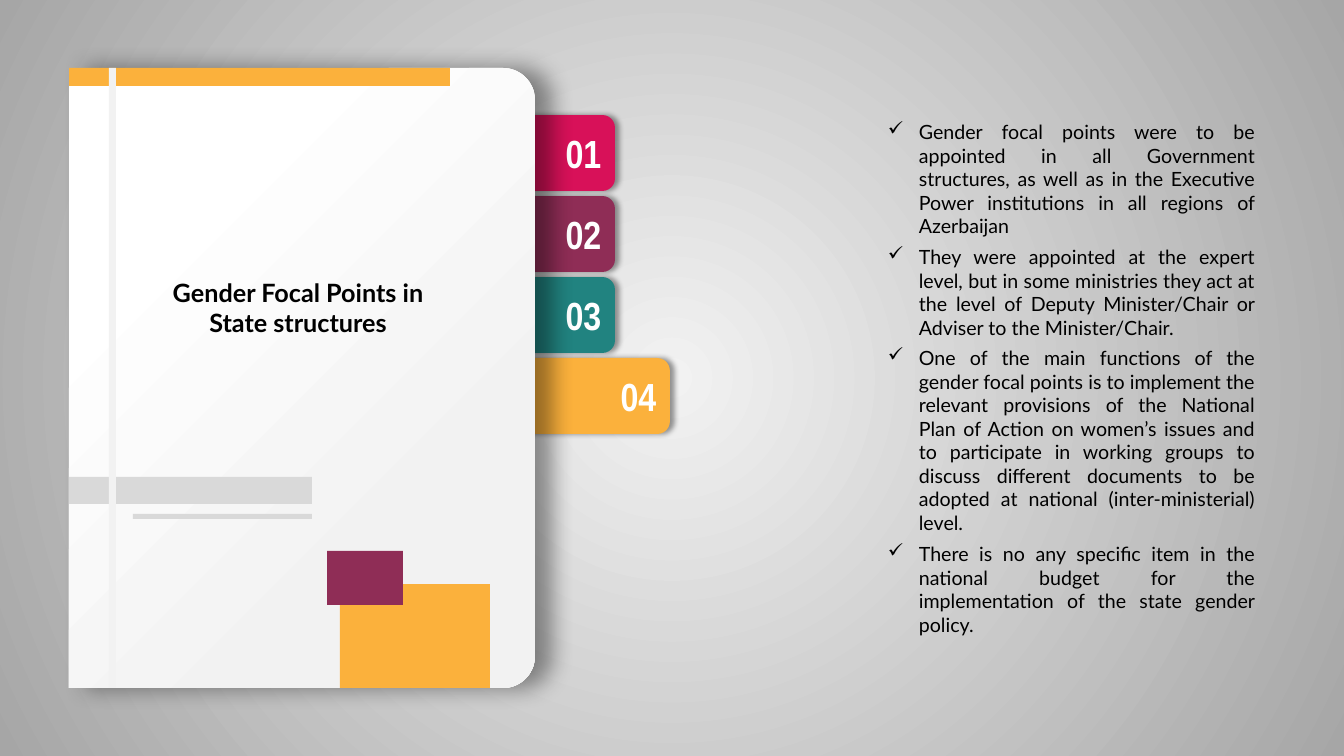
"""Build the slide on gender focal points: a notebook cover with four index tabs."""
import math

import lxml.etree
import pptx
import pptx.dml.color
import pptx.enum.shapes
import pptx.enum.text
import pptx.oxml.ns
import pptx.util

EMU_PER_PX = 914400 / 100.8
ALIGN = pptx.enum.text.PP_ALIGN
ANCHOR = pptx.enum.text.MSO_ANCHOR
PRESET = pptx.enum.shapes.MSO_SHAPE
AMBER, PLUM, TEAL, PINK = "FBB13C", "8F2D56", "218380", "D81159"
SILVER, PALE, WHITE, BLACK = "D9D9D9", "F2F2F2", "FFFFFF", "000000"

TABS = [("04", 219, AMBER), ("03", 164, TEAL), ("02", 164, PLUM), ("01", 164, PINK)]
TAB_LEFT, TAB_TOP, TAB_HEIGHT, TAB_PITCH = 451, 115, 76, 81

COVER_LEFT, COVER_TOP, COVER_RIGHT, COVER_BOTTOM = 69, 68, 535, 688
COVER_RADIUS = 32
COVER_BLOCKS = [
    (69, 68, 381, 18, AMBER),
    (69, 477, 243, 27, SILVER),
    (109, 68, 7, 620, PALE),
    (133, 514, 179, 5, SILVER),
    (340, 584, 150, 104, AMBER),
    (327, 551, 76, 54, PLUM),
]

POINTS = [
    (115, 129, "Gender focal points were to be appointed in all Government structures, "
     "as well as in the Executive Power institutions in all regions of Azerbaijan"),
    (240, 105, "They were appointed at the expert level, but in some ministries they act "
     "at the level of Deputy Minister/Chair or Adviser to the Minister/Chair."),
    (341, 201, "One of the main functions of the gender focal points is to implement the "
     "relevant provisions of the National Plan of Action on women’s issues and to "
     "participate in working groups to discuss different documents to be adopted at "
     "national (inter-ministerial) level."),
    (537, 82, "There is no any specific item in the national budget for the "
     "implementation of the state gender policy."),
]


def px(length):
    """Turn pixels into EMU."""
    return pptx.util.Emu(round(length * EMU_PER_PX))


def rgb(value):
    """Turn a hex string into a colour."""
    return pptx.dml.color.RGBColor.from_string(value)


def add_child(parent, tag, **attributes):
    """Append a DrawingML element to its parent."""
    return lxml.etree.SubElement(parent, pptx.oxml.ns.qn(tag), attributes)


def fill_gradient(fill, stops):
    """Give a fill a two-stop gradient."""
    fill.gradient()
    for stop, (position, colour) in zip(fill.gradient_stops, stops):
        stop.position = position
        stop.color.rgb = rgb(colour)


def cast_shadow(shape, blur, distance):
    """Cast a soft shadow to the right of a shape."""
    shape.shadow.inherit = False
    effects = shape.element.spPr.find(pptx.oxml.ns.qn("a:effectLst"))
    shadow = add_child(effects, "a:outerShdw", blurRad=str(pptx.util.Pt(blur)),
                       dist=str(pptx.util.Pt(distance)), dir="0", algn="l",
                       rotWithShape="0")
    add_child(add_child(shadow, "a:srgbClr", val=BLACK), "a:alpha", val="40000")


def write(frame, text, size, font, colour, align, bold=False):
    """Write one formatted paragraph into a text frame."""
    frame.text = text
    frame.word_wrap = True
    paragraph = frame.paragraphs[0]
    paragraph.alignment = align
    style = paragraph.runs[0].font
    style.size, style.name, style.bold = pptx.util.Pt(size), font, bold
    style.color.rgb = rgb(colour)
    return paragraph


def paint_background(slide):
    """Paint the radial grey background."""
    fill_gradient(slide.background.fill, [(0, PALE), (1, "A6A6A6")])
    gradient = slide.element.find(".//" + pptx.oxml.ns.qn("a:gradFill"))
    gradient.remove(gradient.find(pptx.oxml.ns.qn("a:lin")))
    circle = add_child(gradient, "a:path", path="circle")
    add_child(circle, "a:fillToRect", l="50000", t="50000", r="50000", b="50000")


def add_block(slide, preset, left, top, width, height, colour):
    """Add a flat coloured shape."""
    block = slide.shapes.add_shape(preset, px(left), px(top), px(width), px(height))
    block.fill.solid()
    block.fill.fore_color.rgb = rgb(colour)
    block.line.fill.background()
    block.shadow.inherit = False
    return block


def add_tab(slide, number, top, width, colour):
    """Add a numbered index tab."""
    tab = add_block(slide, PRESET.ROUNDED_RECTANGLE, TAB_LEFT, top, width, TAB_HEIGHT, colour)
    cast_shadow(tab, 4, 3)
    tab.text_frame.vertical_anchor = ANCHOR.MIDDLE
    write(tab.text_frame, number, 28, "Arial Narrow", WHITE, ALIGN.RIGHT, bold=True)


def corner(centre_x, centre_y, start):
    """List the points of a quarter circle, clockwise from a start angle."""
    angles = [math.radians(start + step) for step in range(0, 91, 5)]
    return [(px(centre_x + COVER_RADIUS * math.cos(angle)),
             px(centre_y + COVER_RADIUS * math.sin(angle))) for angle in angles]


def add_cover(slide):
    """Add the notebook cover, rounded on its right side."""
    corner_x = COVER_RIGHT - COVER_RADIUS
    outline = slide.shapes.build_freeform(px(COVER_LEFT), px(COVER_TOP))
    outline.add_line_segments(
        corner(corner_x, COVER_TOP + COVER_RADIUS, -90)
        + corner(corner_x, COVER_BOTTOM - COVER_RADIUS, 0)
        + [(px(COVER_LEFT), px(COVER_BOTTOM))])
    cover = outline.convert_to_shape()
    fill_gradient(cover.fill, [(0.22, WHITE), (0.74, PALE)])
    cover.fill.gradient_angle = 315
    cover.line.fill.background()
    cast_shadow(cover, 16, 12)


def add_point(slide, top, height, text):
    """Add a justified point with a check mark."""
    box = slide.shapes.add_textbox(px(878), px(top), px(387), px(height))
    paragraph = write(box.text_frame, text, 14, "Lato", BLACK, ALIGN.JUSTIFY)
    box.text_frame.auto_size = pptx.enum.text.MSO_AUTO_SIZE.SHAPE_TO_FIT_TEXT
    properties = paragraph._p.get_or_add_pPr()
    properties.set("marL", str(px(31)))
    properties.set("indent", str(px(-31)))
    add_child(properties, "a:buChar", char="✓")


def place_title(slide):
    """Place the title on top of the cover."""
    title = slide.shapes.title
    title.left, title.top, title.width, title.height = px(151), px(272), px(294), px(72)
    write(title.text_frame, "Gender Focal Points in State structures", 18, "Lato",
          BLACK, ALIGN.CENTER, bold=True)
    title.text_frame.vertical_anchor = ANCHOR.TOP
    title.text_frame.auto_size = pptx.enum.text.MSO_AUTO_SIZE.SHAPE_TO_FIT_TEXT
    title.element.getparent().append(title.element)


def main():
    """Build and save the slide."""
    deck = pptx.Presentation()
    deck.slide_width, deck.slide_height = px(1344), px(756)
    slide = deck.slides.add_slide(deck.slide_layouts[5])
    paint_background(slide)
    for row, (number, width, colour) in enumerate(TABS):
        top = TAB_TOP + (len(TABS) - 1 - row) * TAB_PITCH
        add_tab(slide, number, top, width, colour)
    add_cover(slide)
    for block in COVER_BLOCKS:
        add_block(slide, PRESET.RECTANGLE, *block)
    for point in POINTS:
        add_point(slide, *point)
    place_title(slide)
    deck.save("out.pptx")


if __name__ == "__main__":
    main()
